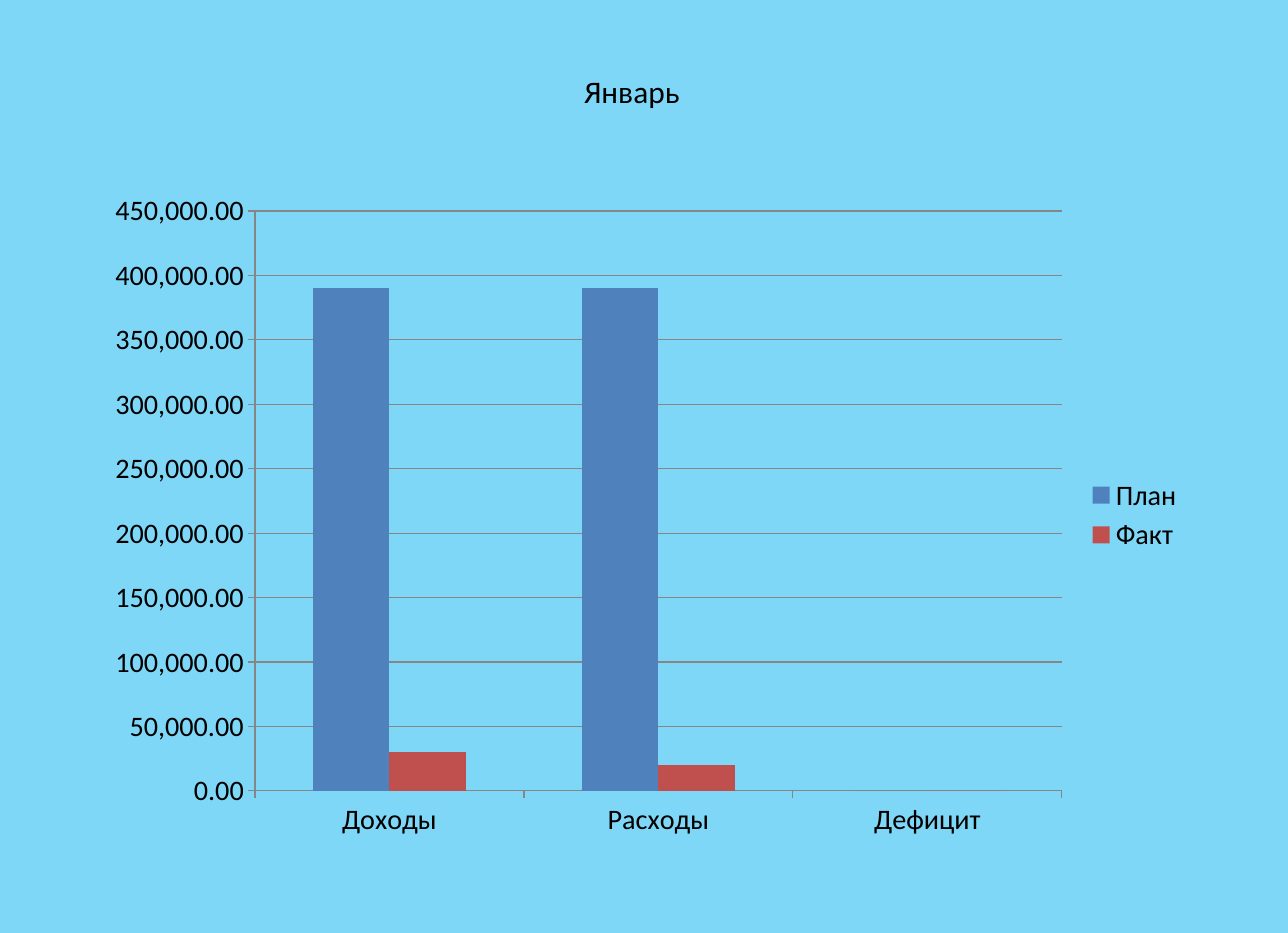
from lxml.etree import SubElement
from pptx import Presentation
from pptx.chart.data import CategoryChartData
from pptx.dml.color import RGBColor
from pptx.enum.chart import XL_CHART_TYPE, XL_LEGEND_POSITION, XL_TICK_MARK
from pptx.enum.text import MSO_AUTO_SIZE
from pptx.oxml.ns import qn
from pptx.util import Emu, Pt

SCALE = 914400 / 112.8
COLORS = {
    "background": "7FD7F7",
    "text": "000000",
    "line": "868686",
    "План": "4F81BD",
    "Факт": "C0504D",
}
BUDGET = {
    "План": (390000, 390000, 0),
    "Факт": (30000, 20000, 0),
}


def px(n):
    return Emu(round(n * SCALE))


def color(name):
    return RGBColor.from_string(COLORS[name])


class BudgetSlide:
    font = "Calibri"

    def __init__(self, prs):
        self.slide = prs.slides.add_slide(prs.slide_layouts[6])
        fill = self.slide.background.fill
        fill.solid()
        fill.fore_color.rgb = color("background")

    def style(self, font, size):
        font.name = self.font
        font.size = Pt(size)
        font.color.rgb = color("text")

    def text(self, text, x, y, w, h, size):
        tf = self.slide.shapes.add_textbox(px(x), px(y), px(w), px(h)).text_frame
        tf.text = text
        tf.word_wrap = False
        tf.auto_size = MSO_AUTO_SIZE.SHAPE_TO_FIT_TEXT
        self.style(tf.paragraphs[0].runs[0].font, size)

    def columns(self, categories, series, x, y, w, h, plot_box, size):
        data = CategoryChartData(number_format="#,##0.00")
        data.categories = categories
        for name, values in series.items():
            data.add_series(name, values)
        chart = self.slide.shapes.add_chart(
            XL_CHART_TYPE.COLUMN_CLUSTERED, px(x), px(y), px(w), px(h), data
        ).chart
        self.style(chart.font, size)
        chart.has_title = False
        chart.has_legend = True
        chart.legend.position = XL_LEGEND_POSITION.RIGHT
        chart.legend.include_in_layout = False
        plot = chart.plots[0]
        plot.vary_by_categories = False
        plot.gap_width = 150
        plot.overlap = 0
        for s in plot.series:
            s.format.fill.solid()
            s.format.fill.fore_color.rgb = color(s.name)
        for axis in (chart.category_axis, chart.value_axis):
            axis.major_tick_mark = XL_TICK_MARK.OUTSIDE
            axis.minor_tick_mark = XL_TICK_MARK.NONE
            self.line(axis.format.line)
        axis = chart.value_axis
        axis.minimum_scale, axis.maximum_scale = 0, 450000
        axis.major_unit = 50000
        axis.tick_labels.number_format = "#,##0.00"
        axis.tick_labels.number_format_is_linked = False
        axis.has_major_gridlines = True
        self.line(axis.major_gridlines.format.line)
        left, top, width, height = plot_box
        self.place_plot(chart, ((left - x) / w, (top - y) / h, width / w, height / h))

    def line(self, line):
        line.color.rgb = color("line")
        line.width = Pt(0.75)

    def place_plot(self, chart, fractions):
        area = next(chart.element.iter(qn("c:plotArea")))
        for old in area.findall(qn("c:layout")):
            area.remove(old)
        layout = SubElement(area, qn("c:layout"))
        area.insert(0, layout)
        manual = SubElement(layout, qn("c:manualLayout"))
        settings = [("layoutTarget", "inner"), ("xMode", "edge"), ("yMode", "edge")]
        settings += [(tag, f"{v:.4f}") for tag, v in zip("xywh", fractions)]
        for tag, value in settings:
            SubElement(manual, qn(f"c:{tag}")).set("val", value)


def main():
    prs = Presentation()
    prs.slide_width, prs.slide_height = px(1288), px(933)
    s = BudgetSlide(prs)
    s.columns(
        ("Доходы", "Расходы", "Дефицит"), BUDGET,
        94, 181, 1101, 668, plot_box=(255, 211, 807, 580), size=18,
    )
    s.text("Январь", 573, 67, 120, 50, size=20)
    prs.save("out.pptx")


if __name__ == "__main__":
    main()
